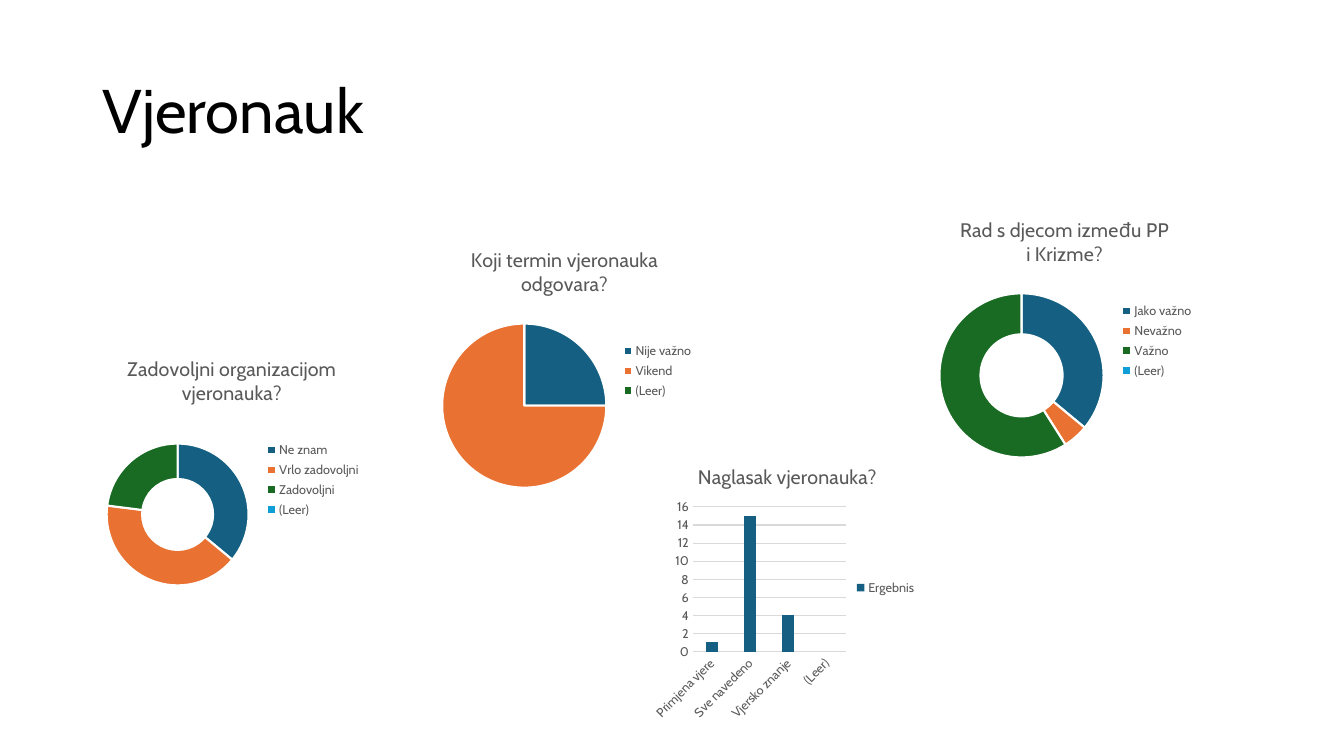
import lxml.etree
import pptx
import pptx.chart.data
import pptx.dml.color
import pptx.enum.chart
import pptx.enum.text
import pptx.oxml
import pptx.oxml.ns
import pptx.util

Inches, Pt = pptx.util.Inches, pptx.util.Pt
KIND = pptx.enum.chart.XL_CHART_TYPE
FACE = "Cabin"
SIDE = 2.76
INK = {"black": "000000", "gray": "595959", "grid": "D9D9D9", "white": "FFFFFF",
       "blue": "156082", "orange": "E97132", "green": "196B24", "sky": "0F9ED5"}
SLICES = ["blue", "orange", "green", "sky"]


def tint(name):
    """Return the named colour."""
    return pptx.dml.color.RGBColor.from_string(INK[name])


def style(font, size, name):
    """Set face, size and colour of a font."""
    font.name, font.size, font.bold = FACE, Pt(size), False
    font.color.rgb = tint(name)


def paint(form, name):
    """Fill a slice or bar with one colour."""
    form.fill.solid()
    form.fill.fore_color.rgb = tint(name)


def rule(line, name, width):
    """Set colour and width of a line."""
    line.color.rgb = tint(name)
    line.width = Pt(width)


def frame(chart, area):
    """Place the inner plot at fractions of the chart box."""
    plot = chart.element.xpath("c:chart/c:plotArea")[0]
    for old in plot.xpath("c:layout"):
        plot.remove(old)
    spots = "".join(f'<c:{tag} val="{val}"/>' for tag, val in zip("xywh", area))
    plot.insert(0, pptx.oxml.parse_xml(
        f'<c:layout {pptx.oxml.ns.nsdecls("c")}><c:manualLayout>'
        '<c:layoutTarget val="inner"/><c:xMode val="edge"/><c:yMode val="edge"/>'
        f'{spots}</c:manualLayout></c:layout>'))


def graph(slide, kind, left, top, title, label, cats, vals, area):
    """Add a titled chart with a legend on the right."""
    data = pptx.chart.data.CategoryChartData()
    data.categories = cats
    data.add_series(label, vals)
    chart = slide.shapes.add_chart(kind, Inches(left), Inches(top), Inches(SIDE),
                                   Inches(SIDE), data).chart
    style(chart.font, 10, "black")
    chart.has_title = True
    para = chart.chart_title.text_frame.paragraphs[0]
    para.text = title
    style(para.runs[0].font, 14, "gray")
    chart.chart_title.include_in_layout = False
    chart.has_legend = True
    chart.legend.position = pptx.enum.chart.XL_LEGEND_POSITION.RIGHT
    chart.legend.include_in_layout = False
    style(chart.legend.font, 9, "gray")
    frame(chart, area)
    return chart


def round_chart(slide, kind, left, top, title, cats, vals, area):
    """Add a pie or ring with white gaps between slices."""
    chart = graph(slide, kind, left, top, title, "Series 1", cats, vals, area)
    plot = chart.plots[0]
    plot.vary_by_categories = True
    for i in range(len(cats)):
        form = plot.series[0].points[i].format
        paint(form, SLICES[i])
        rule(form.line, "white", 1.5)
    for hole in chart.element.xpath(".//c:holeSize"):
        hole.set("val", "75")


def bar_chart(slide, left, top, title, cats, vals, area):
    """Add the column chart with slanted category labels."""
    chart = graph(slide, KIND.COLUMN_CLUSTERED, left, top, title, "Ergebnis",
                  cats, vals, area)
    plot = chart.plots[0]
    plot.vary_by_categories = False
    plot.gap_width, plot.overlap = 219, -27
    paint(plot.series[0].format, "blue")
    cat, val = chart.category_axis, chart.value_axis
    for axis in (cat, val):
        axis.major_tick_mark = pptx.enum.chart.XL_TICK_MARK.NONE
        style(axis.tick_labels.font, 9, "gray")
    rule(cat.format.line, "grid", 0.75)
    val.format.line.fill.background()
    rule(val.major_gridlines.format.line, "grid", 0.75)
    val.minimum_scale, val.maximum_scale, val.major_unit = 0, 16, 2
    chart.element.xpath(".//c:catAx/c:txPr/a:bodyPr")[0].set("rot", "-2700000")


def heading(slide, left, top, width, height, text):
    """Add the slide heading."""
    box = slide.shapes.add_textbox(*map(Inches, (left, top, width, height)))
    box.text_frame.text = text
    box.text_frame.word_wrap = True
    box.text_frame.vertical_anchor = pptx.enum.text.MSO_ANCHOR.MIDDLE
    para = box.text_frame.paragraphs[0]
    para.line_spacing = 0.9
    style(para.runs[0].font, 44, "black")


def main():
    """Build and save the slide."""
    deck = pptx.Presentation()
    deck.slide_width, deck.slide_height = Inches(13.33), Inches(7.5)
    slide = deck.slides.add_slide(deck.slide_layouts[6])
    heading(slide, 0.92, 0.4, 11.5, 1.45, "Vjeronauk")
    round_chart(slide, KIND.DOUGHNUT, 0.92, 3.38, "Zadovoljni organizacijom vjeronauka?",
                ["Ne znam", "Vrlo zadovoljni", "Zadovoljni", "(Leer)"],
                [36, 41, 23, None], (0.05, 0.37, 0.51, 0.51))
    round_chart(slide, KIND.PIE, 4.22, 2.3, "Koji termin vjeronauka odgovara?",
                ["Nije važno", "Vikend", "(Leer)"],
                [25, 75, None], (0.06, 0.33, 0.59, 0.59))
    bar_chart(slide, 6.43, 4.45, "Naglasak vjeronauka?",
              ["Primjena vjere", "Sve navedeno", "Vjersko znanje", "(Leer)"],
              [1, 15, 4, None], (0.16, 0.21, 0.55, 0.52))
    round_chart(slide, KIND.DOUGHNUT, 9.18, 2, "Rad s djecom između PP i Krizme?",
                ["Jako važno", "Nevažno", "Važno", "(Leer)"],
                [36, 5, 59, None], (0.05, 0.33, 0.59, 0.59))
    deck.save("out.pptx")


if __name__ == "__main__":
    main()
